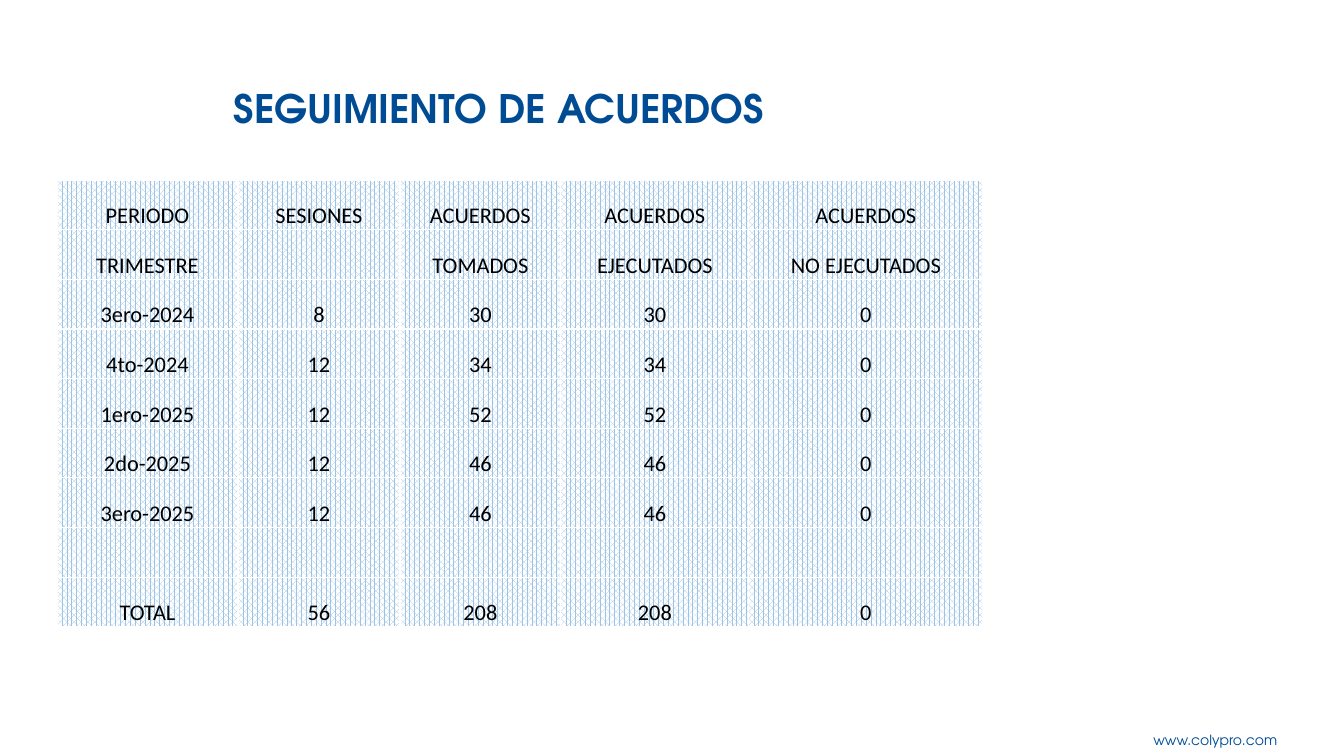
from lxml.etree import SubElement
from pptx import Presentation
from pptx.dml.color import RGBColor
from pptx.enum.dml import MSO_PATTERN
from pptx.enum.text import MSO_ANCHOR as ANCHOR, PP_ALIGN as ALIGN
from pptx.oxml.ns import qn
from pptx.util import Pt

# Content
TITLE = "SEGUIMIENTO DE ACUERDOS"
WEBSITE = "www.colypro.com"
ROWS = [
    ("PERIODO", "SESIONES", "ACUERDOS", "ACUERDOS", "ACUERDOS"),
    ("TRIMESTRE", "", "TOMADOS", "EJECUTADOS", "NO EJECUTADOS"),
    ("3ero-2024", "8", "30", "30", "0"),
    ("4to-2024", "12", "34", "34", "0"),
    ("1ero-2025", "12", "52", "52", "0"),
    ("2do-2025", "12", "46", "46", "0"),
    ("3ero-2025", "12", "46", "46", "0"),
    ("", "", "", "", ""),
    ("TOTAL", "56", "208", "208", "0"),
]

# Layout in px
SLIDE_W, SLIDE_H = 1344, 756
COL_WIDTHS = (181, 162, 161, 188, 234)
TABLE_LEFT, TABLE_TOP, TABLE_H = 57, 180, 447
TITLE_BOX = (56, 81, 886, 59)
WEBSITE_BOX = (1057, 726, 230, 27)

# Style
NAVY = RGBColor(0x00, 0x4C, 0x94)
SKY = RGBColor(0x9D, 0xC3, 0xE6)
WHITE = RGBColor(0xFF, 0xFF, 0xFF)
BLACK = RGBColor(0x00, 0x00, 0x00)
HEADING_FONT, TABLE_FONT = "TeX Gyre Adventor", "Calibri"
BORDER_SIDES = ("a:lnL", "a:lnR", "a:lnT", "a:lnB")


def px(n):
    return round(n * 914400 / 100.8)


def write(p, text, align, color, **font):
    p.alignment = align
    r = p.add_run()
    r.text = text
    r.font.color.rgb = color
    for name, value in font.items():
        setattr(r.font, name, value)


def add_text(s, box, text, align, **font):
    tf = s.shapes.add_textbox(*map(px, box)).text_frame
    tf.word_wrap = True
    tf.vertical_anchor = ANCHOR.MIDDLE
    p = tf.paragraphs[0]
    write(p, text, align, NAVY, name=HEADING_FONT, **font)
    return p


def add_borders(cell):
    tc_pr = cell._tc.get_or_add_tcPr()
    for side in BORDER_SIDES:
        line = SubElement(tc_pr, qn(side), w=str(Pt(1)))
        fill = SubElement(line, qn("a:solidFill"))
        SubElement(fill, qn("a:srgbClr"), val=str(WHITE))


def style_cell(cell):
    add_borders(cell)
    cell.fill.patterned()
    cell.fill.pattern = MSO_PATTERN.PERCENT_70
    cell.fill.fore_color.rgb = SKY
    cell.fill.back_color.rgb = WHITE
    cell.vertical_anchor = ANCHOR.BOTTOM
    for side in ("left", "right", "top", "bottom"):
        setattr(cell, f"margin_{side}", 0)


def add_agreements(s):
    frame = s.shapes.add_table(len(ROWS), len(COL_WIDTHS), px(TABLE_LEFT),
                               px(TABLE_TOP), px(sum(COL_WIDTHS)), px(TABLE_H))
    table = frame.table
    table.first_row = table.horz_banding = False
    for col, width in zip(table.columns, COL_WIDTHS):
        col.width = px(width)
    for i, row in enumerate(ROWS):
        for j, text in enumerate(row):
            cell = table.cell(i, j)
            style_cell(cell)
            if text:
                write(cell.text_frame.paragraphs[0], text, ALIGN.CENTER, BLACK,
                      name=TABLE_FONT, size=Pt(16))


def main():
    prs = Presentation()
    prs.slide_width, prs.slide_height = px(SLIDE_W), px(SLIDE_H)
    s = prs.slides.add_slide(prs.slide_layouts[6])

    # Website, title and table
    add_text(s, WEBSITE_BOX, WEBSITE, ALIGN.RIGHT, size=Pt(10))
    title = add_text(s, TITLE_BOX, TITLE, ALIGN.CENTER, size=Pt(28), bold=True)
    title.line_spacing = 0.9
    add_agreements(s)

    prs.save("out.pptx")


if __name__ == "__main__":
    main()
